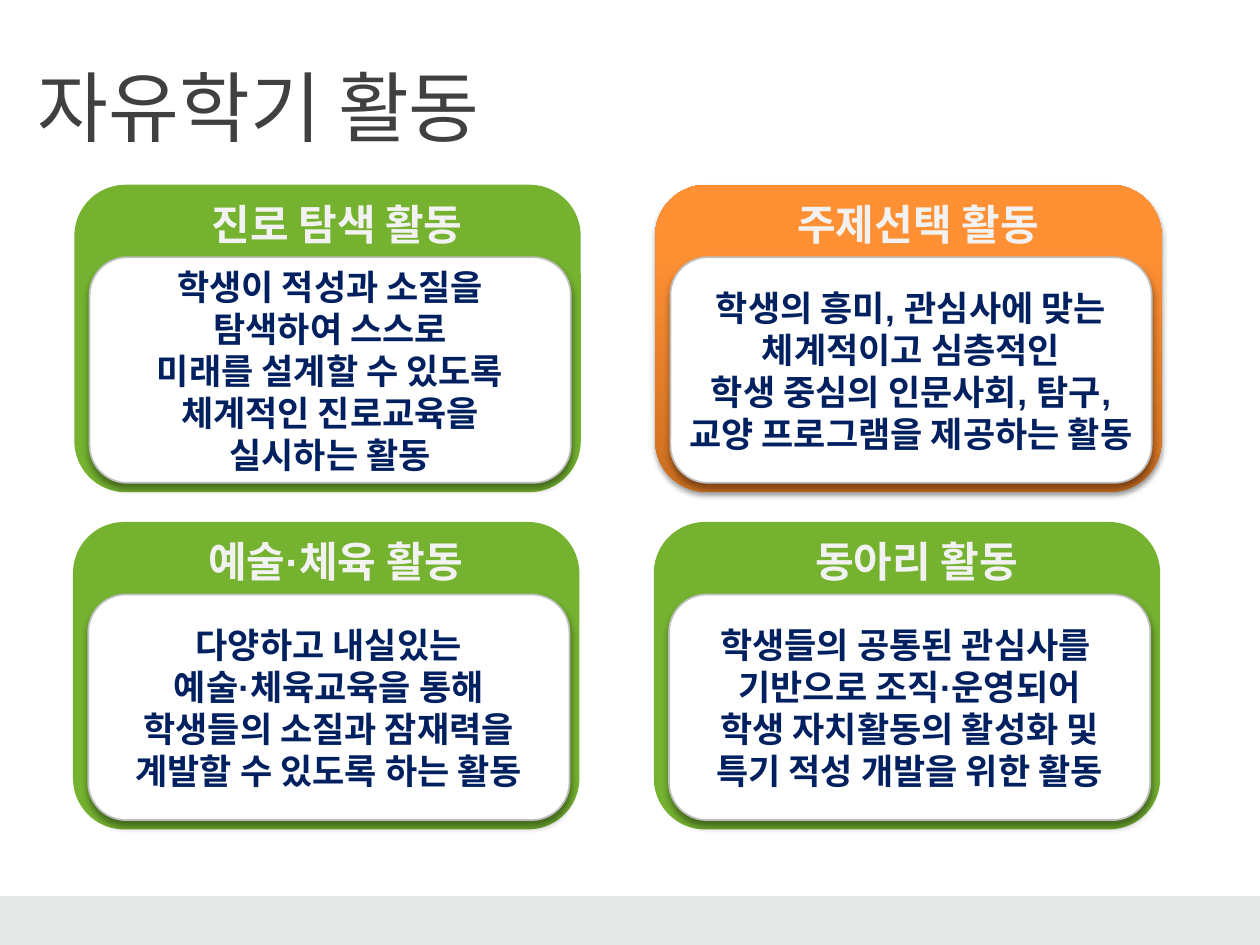
"""Build the slide on the four kinds of free-semester activity."""
from lxml import etree
from pptx import Presentation
from pptx.dml.color import RGBColor
from pptx.enum.shapes import MSO_SHAPE
from pptx.enum.text import MSO_ANCHOR, PP_ALIGN
from pptx.oxml.ns import qn
from pptx.util import Pt

RECT, ROUND = MSO_SHAPE.RECTANGLE, MSO_SHAPE.ROUNDED_RECTANGLE
MIDDLE = MSO_ANCHOR.MIDDLE
LEFT, CENTER = PP_ALIGN.LEFT, PP_ALIGN.CENTER

WHITE = RGBColor(0xFF, 0xFF, 0xFF)
FOOTER = RGBColor(0xE7, 0xE9, 0xE8)
GREEN = RGBColor(0x74, 0xB2, 0x30)
BORDER = RGBColor(0xBF, 0xBF, 0xBF)
TITLE_INK = RGBColor(0x40, 0x40, 0x40)
HEAD_INK = RGBColor(0xF2, 0xF2, 0xF2)
BODY_INK = RGBColor(0x00, 0x20, 0x60)
BLACK = RGBColor(0x00, 0x00, 0x00)
ORANGE = [(0, RGBColor(0xCC, 0x6E, 0x20)), (80, RGBColor(0xFF, 0x90, 0x34)),
          (100, RGBColor(0xFF, 0x91, 0x36))]

KOREAN, LATIN = "Noto Sans CJK KR", "Arial"

TITLE = "자유학기 활동"
CARDS = [
    ("진로 탐색 활동", KOREAN, False,
     ["학생이 적성과 소질을", "탐색하여 스스로", "미래를 설계할 수 있도록",
      "체계적인 진로교육을", "실시하는 활동"]),
    ("주제선택 활동", KOREAN, True,
     ["학생의 흥미, 관심사에 맞는", "체계적이고 심층적인",
      "학생 중심의 인문사회, 탐구,", "교양 프로그램을 제공하는 활동"]),
    ("예술·체육 활동", LATIN, False,
     ["다양하고 내실있는", "예술·체육교육을 통해", "학생들의 소질과 잠재력을",
      "계발할 수 있도록 하는 활동"]),
    ("동아리 활동", KOREAN, False,
     ["학생들의 공통된 관심사를 ", "기반으로 조직·운영되어",
      "학생 자치활동의 활성화 및", "특기 적성 개발을 위한 활동"]),
]

CARD_X, CARD_Y = 42.5, 105.6
STEP_X, STEP_Y = 331.9, 192.7
ROW_SHIFT = -0.8
CARD_W, CARD_H = 289.4, 175.7
PANEL = (8.7, 41.4, 275, 128.9)
HEAD = (14.2, 8.3, 272, 27.4)


def add_box(s, kind, x, y, w, h, fill=None):
    sp = s.shapes.add_shape(kind, Pt(x), Pt(y), Pt(w), Pt(h))
    sp.shadow.inherit = False
    sp.line.fill.background()
    if fill is not None:
        sp.fill.solid()
        sp.fill.fore_color.rgb = fill
    return sp


def color_element(parent, color):
    return etree.SubElement(parent, qn("a:srgbClr"), val=str(color))


def set_gradient(sp, stops):
    sp.fill.gradient()
    sp.fill.gradient_angle = 90
    stop_list = sp._element.spPr.find(qn("a:gradFill")).find(qn("a:gsLst"))
    for old in list(stop_list):
        stop_list.remove(old)
    for pos, color in stops:
        gs = etree.SubElement(stop_list, qn("a:gs"), pos=str(pos * 1000))
        color_element(gs, color)


def set_shadow(sp, alpha, blur, dist):
    effects = sp._element.spPr.find(qn("a:effectLst"))
    shadow = etree.SubElement(
        effects, qn("a:outerShdw"), blurRad=str(int(Pt(blur))),
        dist=str(int(Pt(dist))), dir="5400000", rotWithShape="0")
    color = color_element(shadow, BLACK)
    etree.SubElement(color, qn("a:alpha"), val=str(alpha * 1000))


def write(sp, lines, size, font, color, bold=False, align=CENTER, wrap=True):
    tf = sp.text_frame
    tf.word_wrap = wrap
    tf.vertical_anchor = MIDDLE
    for i, line in enumerate(lines):
        p = tf.add_paragraph() if i else tf.paragraphs[0]
        p.alignment = align
        r = p.add_run()
        r.text = line
        r.font.size = Pt(size)
        r.font.bold = bold
        r.font.color.rgb = color
        r.font.name = font
        etree.SubElement(r.font._element, qn("a:ea"), typeface=KOREAN)


def add_text(s, x, y, w, h, *args, **kwargs):
    write(s.shapes.add_textbox(Pt(x), Pt(y), Pt(w), Pt(h)), *args, **kwargs)


def add_card(s, x, y, head, head_font, highlighted, lines):
    if highlighted:
        card = add_box(s, ROUND, x, y, CARD_W, CARD_H)
        set_gradient(card, ORANGE)
        set_shadow(card, 35, 3.1, 1.8)
    else:
        add_box(s, ROUND, x, y, CARD_W, CARD_H, GREEN)

    dx, dy, w, h = PANEL
    panel = add_box(s, ROUND, x + dx, y + dy, w, h, WHITE)
    panel.line.color.rgb = BORDER
    panel.line.width = Pt(1)
    set_shadow(panel, 40, 4, 3)
    write(panel, lines, 20, LATIN, BODY_INK, bold=True, wrap=False)

    dx, dy, w, h = HEAD
    add_text(s, x + dx, y + dy, w, h, [head], 24, head_font, HEAD_INK, bold=True)


def main():
    prs = Presentation()
    prs.slide_width, prs.slide_height = Pt(720), Pt(540)
    s = prs.slides.add_slide(prs.slide_layouts[6])
    add_box(s, RECT, 0, 512, 720, 28, FOOTER)
    add_text(s, 14.4, 15.1, 648, 90, [TITLE], 44, KOREAN, TITLE_INK, align=LEFT)
    for i, card in enumerate(CARDS):
        row, col = divmod(i, 2)
        add_card(s, CARD_X + col * STEP_X + row * ROW_SHIFT,
                 CARD_Y + row * STEP_Y, *card)
    prs.save("out.pptx")


if __name__ == "__main__":
    main()
